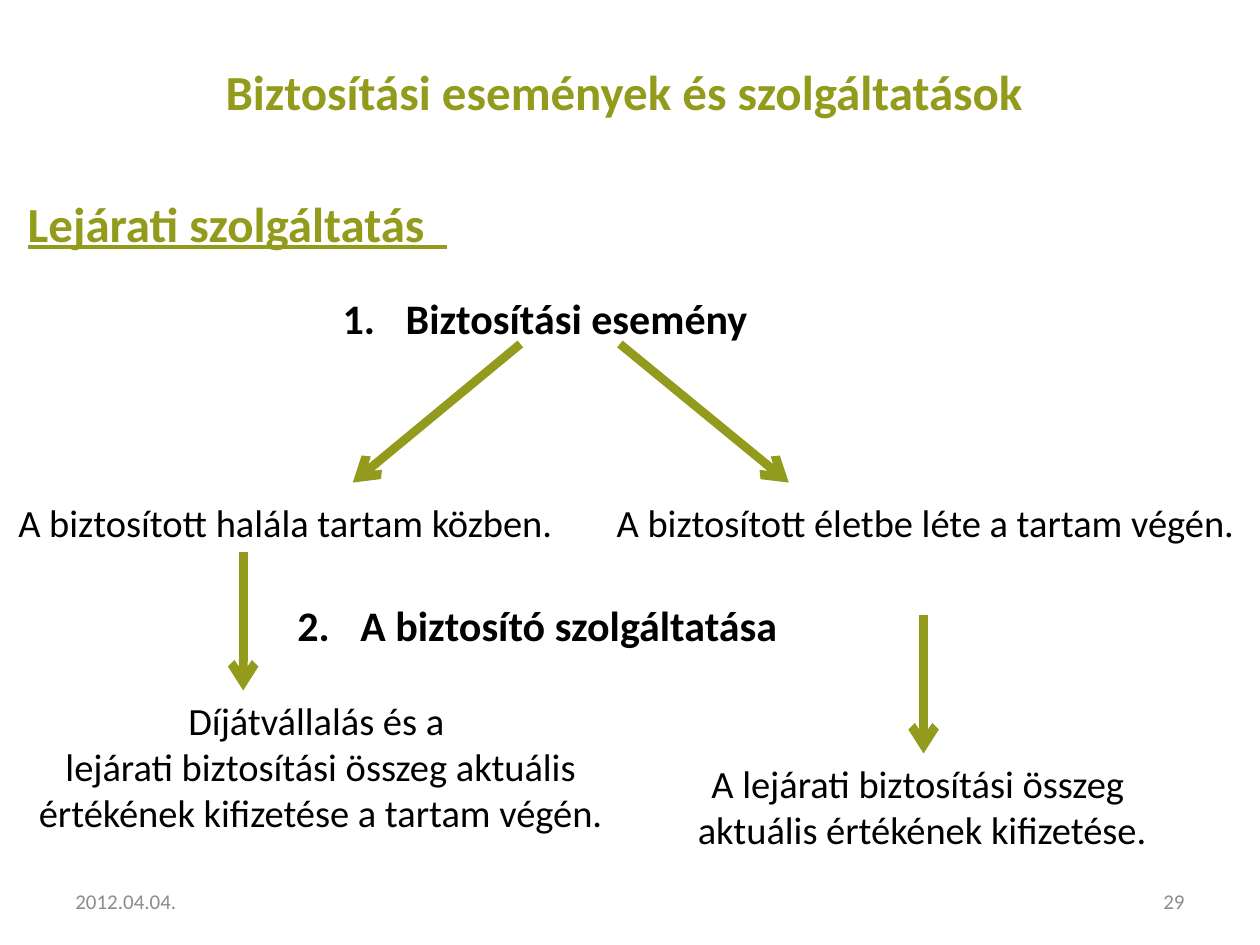
from lxml.etree import SubElement
from pptx import Presentation
from pptx.dml.color import RGBColor
from pptx.enum.shapes import MSO_CONNECTOR
from pptx.enum.text import MSO_ANCHOR as ANCHOR, MSO_AUTO_SIZE, PP_ALIGN as ALIGN
from pptx.oxml.ns import qn
from pptx.util import Inches, Pt

COLORS = {"olive": "929B1B", "text": "000000", "muted": "8C8C8C"}
UNIT = 0.1  # the slide is a grid of 100 columns and 75 rows
COLS, ROWS = 100, 75
HEADING = {"size": Pt(28), "bold": True}
ITEM = {"size": Pt(24), "bold": True}
NOTE = {"size": Pt(22)}
SMALL = {"size": Pt(12)}


def grid(n):
    return Inches(n * UNIT)


def within(box, dx, dy, w, h):
    """Box offset from the top left corner of another box."""
    return box[0] + dx, box[1] + dy, w, h


def move(sp, box):
    sp.left, sp.top, sp.width, sp.height = map(grid, box)


def format_font(font, color, values):
    for name, value in {"name": "Calibri", **values}.items():
        setattr(font, name, value)
    font.color.rgb = RGBColor.from_string(COLORS[color])


def write(sp, lines, color, values, align=ALIGN.LEFT, anchor=ANCHOR.TOP):
    tf = sp.text_frame
    tf.word_wrap, tf.auto_size, tf.vertical_anchor = True, MSO_AUTO_SIZE.NONE, anchor
    tf.text = "\n".join(lines)
    for p in tf.paragraphs:
        p.alignment = align
        format_font(p.runs[0].font, color, values)


def add_text(s, box, lines, color="text", values=NOTE, align=ALIGN.CENTER, **kw):
    sp = s.shapes.add_textbox(*map(grid, box))
    write(sp, lines, color, values, align, **kw)


def add_arrow(s, x, y, dx, dy=11):
    line = s.shapes.add_connector(MSO_CONNECTOR.STRAIGHT, *map(grid, (x, y, x + dx, y + dy)))
    line.line.color.rgb = RGBColor.from_string(COLORS["olive"])
    line.line.width = Pt(5)
    SubElement(line.line._get_or_add_ln(), qn("a:tailEnd"), type="arrow")
    SubElement(line._element.spPr, qn("a:effectLst"))


def build_title(s, box):
    move(s.shapes.title, box)
    write(s.shapes.title, ["Biztosítási események és szolgáltatások"], "olive", HEADING)


def build_outline(s, box):
    """Section heading followed by its two numbered items."""
    sp = s.placeholders[1]
    move(sp, box)
    items = [
        ("Lejárati szolgáltatás  ", "olive", {**HEADING, "underline": True}, 0.38, 0.38, 0, None),
        ("Biztosítási esemény", "text", ITEM, 3, 0.5, 17.5, 1),
        ("A biztosító szolgáltatása", "text", ITEM, 2.64, 0.5, 140.5, 2),
    ]
    tf = sp.text_frame
    write(sp, [item[0] for item in items], "text", ITEM)
    for p, (_, color, values, margin, hang, before, number) in zip(tf.paragraphs, items):
        p.line_spacing, p.space_before, p.space_after = 1.2, Pt(before), Pt(0)
        pPr = p._p.get_or_add_pPr()
        pPr.set("marL", str(Inches(margin)))
        pPr.set("indent", str(-Inches(hang)))
        if number:
            SubElement(pPr, qn("a:buFont"), typeface="+mj-lt")
            SubElement(pPr, qn("a:buAutoNum"), type="arabicPeriod", startAt=str(number))
        else:
            SubElement(pPr, qn("a:buNone"))
        format_font(p.runs[0].font, color, values)


def build_branch(s, box, event, arrow, service, service_box):
    """Event at the top of the box, its arrow, and the service below."""
    add_text(s, within(box, 0, 0, box[2], 4.7), event)
    add_arrow(s, *within(box, *arrow, 0, 0)[:2], 0)
    add_text(s, within(box, *service_box), service)


def build_footer(s, box):
    w = 23.3
    for dx, text, align in ((0, "2012.04.04.", ALIGN.LEFT), (box[2] - w, "29", ALIGN.RIGHT)):
        add_text(s, within(box, dx, 0, w, box[3]), [text], "muted", SMALL, align,
                 anchor=ANCHOR.MIDDLE)


def main():
    prs = Presentation()
    prs.slide_width, prs.slide_height = grid(COLS), grid(ROWS)
    s = prs.slides.add_slide(prs.slide_layouts[1])
    build_footer(s, (5, 69.5, 90, 4))
    build_outline(s, (1.2, 13.9, 94.5, 59.9))
    build_title(s, (16.9, 4.4, 80.7, 5.7))
    for x, dx in ((41.3, -13.3), (49.2, 13.4)):
        add_arrow(s, x, 27.3, dx)
    build_branch(s, (0, 39.1, 45.3, 28), ["A biztosított halála tartam közben."], (19.3, 4.7),
                 ["Díjátvállalás és a ",
                  "lejárati biztosítási összeg aktuális értékének kifizetése a tartam végén."],
                 (2, 15.7, 46.9, 12.1))
    build_branch(s, (46.9, 39.1, 53.1, 30), ["A biztosított életbe léte a tartam végén."],
                 (26.4, 9.7),
                 ["A lejárati biztosítási összeg", " aktuális értékének kifizetése."],
                 (3.9, 20.7, 44.1, 8.4))
    prs.save("out.pptx")


if __name__ == "__main__":
    main()
